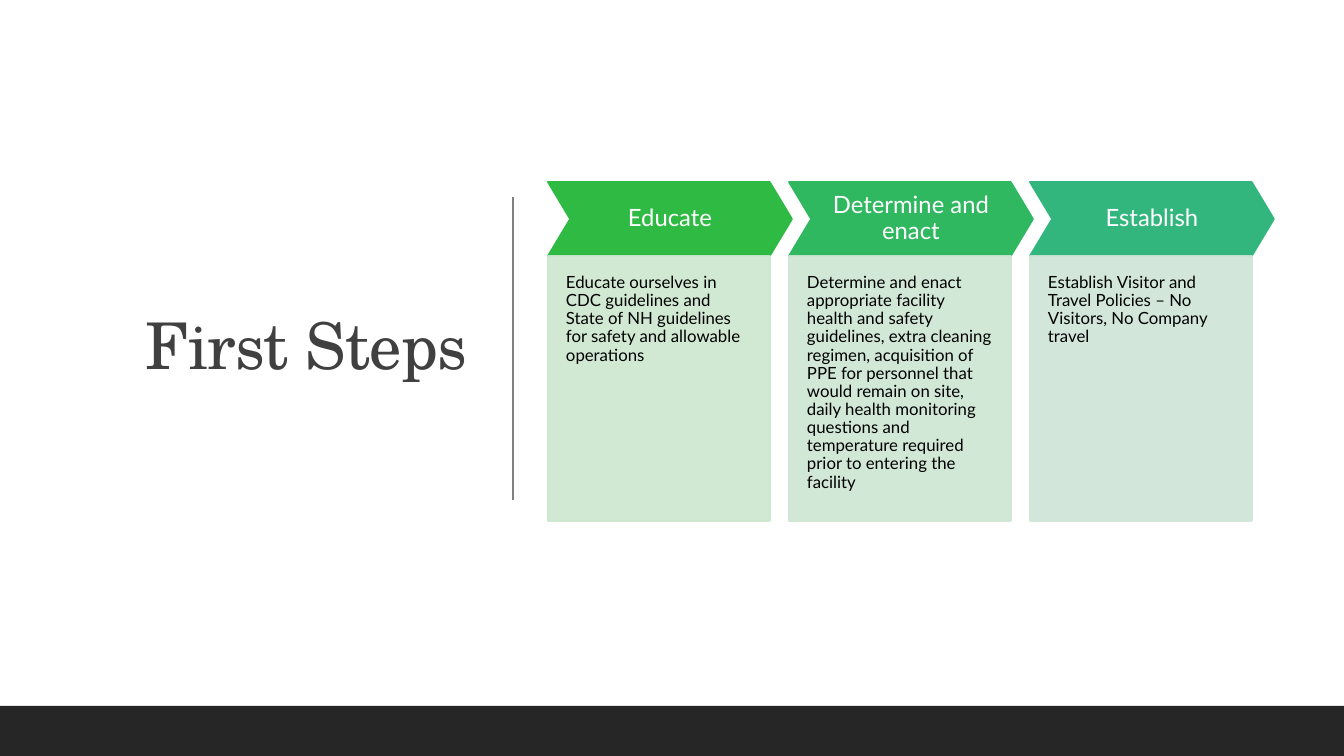
from lxml import etree
from pptx import Presentation
from pptx.dml.color import RGBColor
from pptx.enum.shapes import MSO_CONNECTOR, MSO_SHAPE
from pptx.enum.text import MSO_ANCHOR, PP_ALIGN
from pptx.oxml.ns import qn
from pptx.util import Pt

RECTANGLE, CHEVRON = MSO_SHAPE.RECTANGLE, MSO_SHAPE.CHEVRON
STRAIGHT = MSO_CONNECTOR.STRAIGHT
TOP, MIDDLE = MSO_ANCHOR.TOP, MSO_ANCHOR.MIDDLE
LEFT, CENTER, RIGHT = PP_ALIGN.LEFT, PP_ALIGN.CENTER, PP_ALIGN.RIGHT

EMU_PER_PX = 914400 / 100.8
HEADING_FONT, BODY_FONT = "TeX Gyre Schola", "Lato"
COLORS = {
    "background": "FFFFFF",
    "title": "404040",
    "divider": "808080",
    "footer": "262626",
    "chevron_text": "FFFFFF",
    "body_text": "000000",
}
STEPS = [
    ("Educate", "2EBA43", "CDE7CF",
     "Educate ourselves in CDC guidelines and State of NH guidelines for "
     "safety and allowable operations"),
    ("Determine and enact", "30B861", "CEE6D3",
     "Determine and enact appropriate facility health and safety guidelines, "
     "extra cleaning regimen, acquisition of PPE for personnel that would "
     "remain on site, daily health monitoring questions and temperature "
     "required prior to entering the facility"),
    ("Establish", "33B67D", "CEE5D7",
     "Establish Visitor and Travel Policies – No Visitors, No Company travel"),
]
STEP_LEFT, STEP_TOP, STEP_PITCH = 548, 182, 241
CHEVRON_WIDTH, CHEVRON_HEIGHT = 244, 74
BODY_WIDTH, BODY_HEIGHT = 222, 265


def px(length):
    return round(length * EMU_PER_PX)


def rgb(color):
    return RGBColor.from_string(color)


def write_text(shape, text, *, size, font, color, align=LEFT, anchor=TOP,
               insets=(10, 5, 10, 5), spacing=None):
    frame = shape.text_frame
    frame.word_wrap = True
    frame.vertical_anchor = anchor
    (frame.margin_left, frame.margin_top,
     frame.margin_right, frame.margin_bottom) = map(px, insets)
    para = frame.paragraphs[0]
    para.alignment = align
    para.line_spacing = 0.9
    span = para.add_run()
    span.text = text
    span.font.size = Pt(size)
    span.font.name = font
    span.font.color.rgb = rgb(color)
    if spacing is not None:
        span.font._element.set("spc", str(spacing))


def add_block(page, kind, left, top, width, height, color,
              outlined=False, opacity=None):
    block = page.shapes.add_shape(kind, px(left), px(top), px(width), px(height))
    block.shadow.inherit = False
    block.fill.solid()
    block.fill.fore_color.rgb = rgb(color)
    if outlined:
        block.line.color.rgb = rgb(color)
        block.line.width = Pt(1.25)
    else:
        block.line.fill.background()
    if opacity is not None:
        for tint in block._element.spPr.iter(qn("a:srgbClr")):
            etree.SubElement(tint, qn("a:alpha")).set("val", str(opacity * 1000))
    return block


def add_title(page, text):
    box = page.shapes.add_textbox(px(71), px(70), px(406), px(557))
    write_text(box, text, size=46, font=HEADING_FONT, color=COLORS["title"],
               align=RIGHT, anchor=MIDDLE, spacing=-50)


def add_divider(page, x, top, bottom):
    divider = page.shapes.add_connector(STRAIGHT, px(x), px(top), px(x), px(bottom))
    divider.line.color.rgb = rgb(COLORS["divider"])
    divider.line.width = Pt(1)
    etree.SubElement(divider._element.spPr, qn("a:effectLst"))


def add_step(page, left, heading, chevron_color, body_color, description):
    chevron = add_block(page, CHEVRON, left, STEP_TOP, CHEVRON_WIDTH,
                        CHEVRON_HEIGHT, chevron_color, outlined=True)
    chevron.adjustments[0] = 0.3
    write_text(chevron, heading, size=17, font=BODY_FONT,
               color=COLORS["chevron_text"], align=CENTER, anchor=MIDDLE,
               insets=(9, 9, 9, 9))
    body = add_block(page, RECTANGLE, left, STEP_TOP + CHEVRON_HEIGHT, BODY_WIDTH,
                     BODY_HEIGHT, body_color, outlined=True, opacity=90)
    write_text(body, description, size=12, font=BODY_FONT,
               color=COLORS["body_text"], insets=(18, 18, 18, 35))


def main():
    deck = Presentation()
    deck.slide_width, deck.slide_height = px(1344), px(756)
    page = deck.slides.add_slide(deck.slide_layouts[6])
    add_block(page, RECTANGLE, 0, 0, 1344, 756, COLORS["background"])
    add_title(page, "First Steps")
    add_divider(page, 513, 197, 500)
    add_block(page, RECTANGLE, 0, 706, 1344, 50, COLORS["footer"])
    for index, step in enumerate(STEPS):
        add_step(page, STEP_LEFT + index * STEP_PITCH, *step)
    deck.save("out.pptx")


if __name__ == "__main__":
    main()
